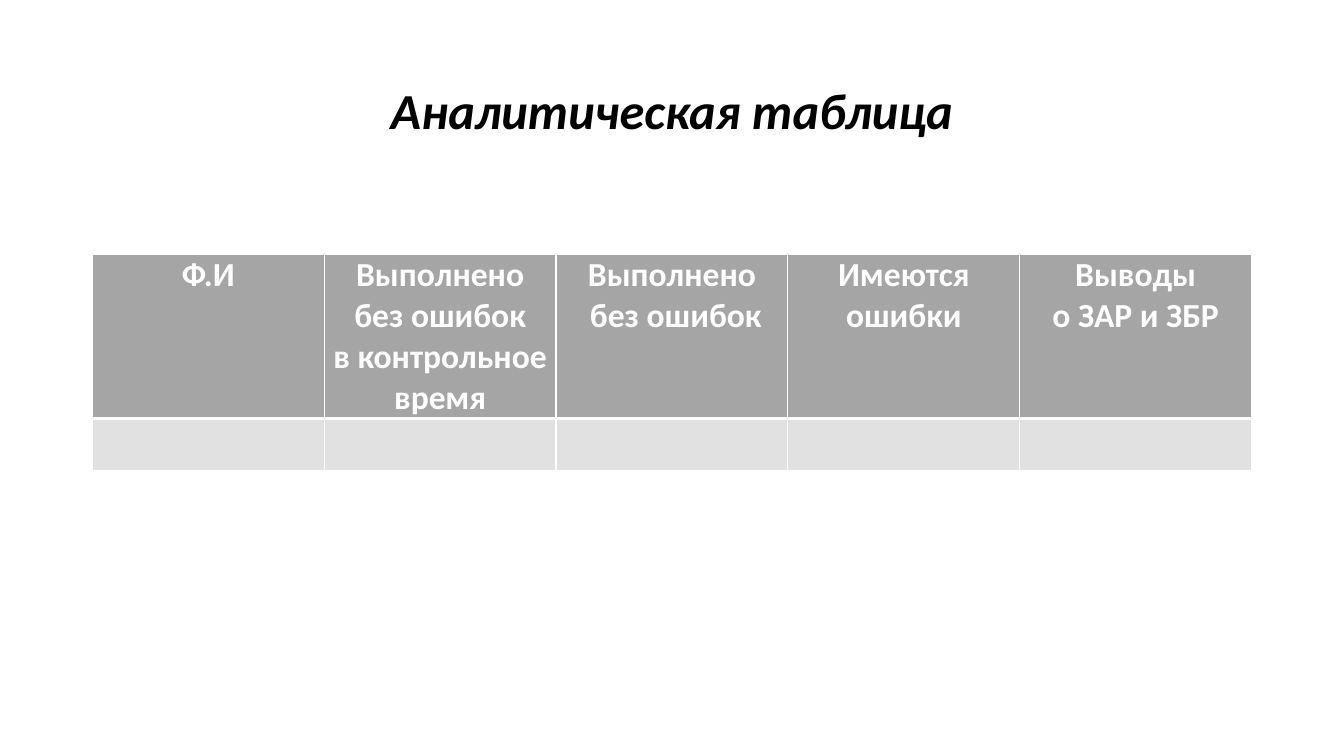
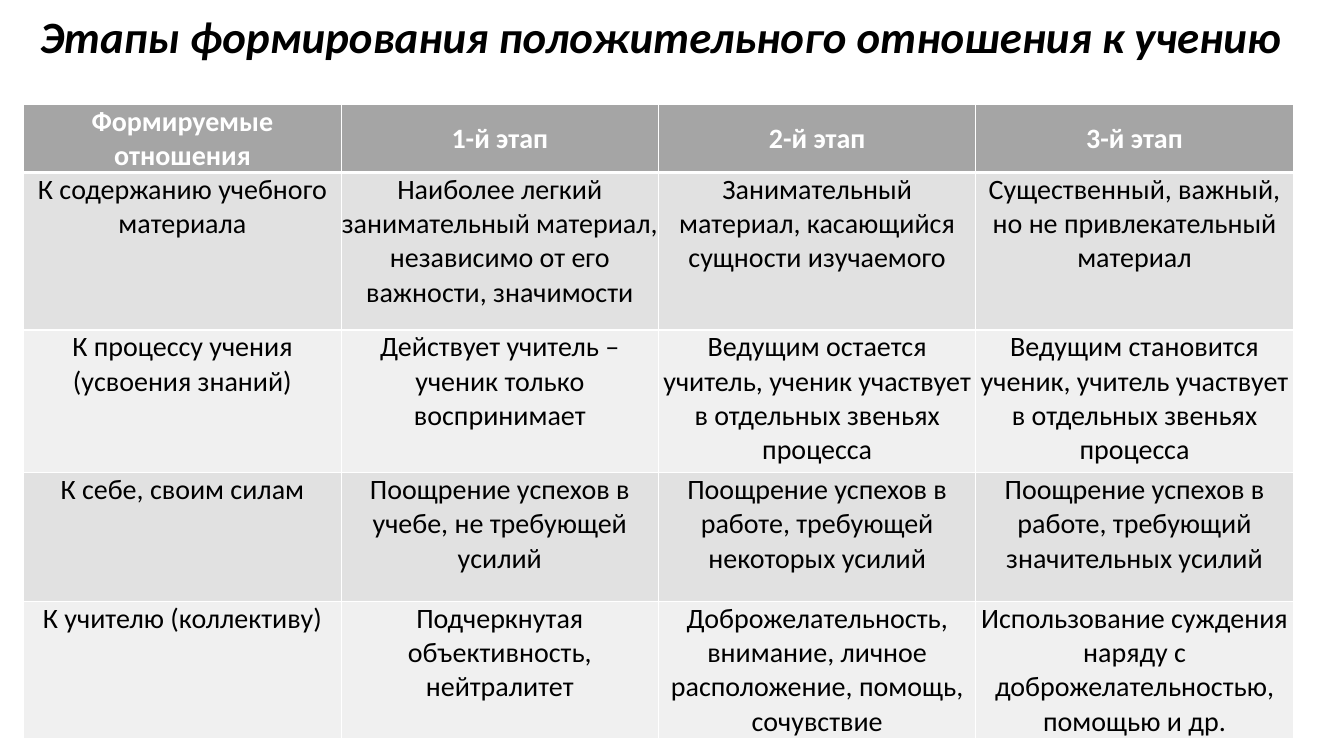
from dataclasses import dataclass

from lxml.etree import SubElement
from pptx import Presentation
from pptx.dml.color import RGBColor as RGB
from pptx.enum.text import MSO_ANCHOR as Anchor, PP_ALIGN as Align
from pptx.oxml.ns import qn
from pptx.util import Pt


@dataclass(frozen=True)
class Theme:
    font: str = "Calibri"
    ink: str = "000000"
    white: str = "FFFFFF"
    head: str = "A5A5A5"
    bands: tuple = ("E1E1E1", "F0F0F0")
    thin: int = 1
    thick: int = 3


T = Theme()

# Content: boxes are left, top, width, height; a line break starts a paragraph
SLIDES = [
    {
        "title": "Аналитическая таблица",
        "box": (66, 29, 828, 104),
        "size": 36,
        "table": {
            "at": (66, 182, 828),
            "size": 24,
            "inset": 5,
            "anchor": Anchor.TOP,
            "heights": (117, 37),
            "rows": [
                ("Ф.И", "Выполнено без ошибок\nв контрольное время",
                 "Выполнено\n без ошибок", "Имеются\nошибки",
                 "Выводы\nо ЗАР и ЗБР"),
                ("",) * 5,
            ],
        },
    },
    {
        "title": "Этапы формирования положительного отношения к учению",
        "box": (0, 0, 944.6, 55.4),
        "size": 32,
        "table": {
            "at": (17, 74.7, 906.8),
            "size": 20,
            "inset": 0,
            "anchor": Anchor.MIDDLE,
            "heights": (48.6, 112.5, 102, 92, 98),
            "rows": [
                ("Формируемые отношения", "1-й этап", "2-й этап", "3-й этап"),
                ("К содержанию учебного материала",
                 "Наиболее легкий занимательный материал, "
                 "независимо от его важности, значимости",
                 "Занимательный материал, касающийся сущности изучаемого",
                 "Существенный, важный, но не привлекательный материал"),
                ("К процессу учения (усвоения знаний)",
                 "Действует учитель – ученик только воспринимает",
                 "Ведущим остается учитель, ученик участвует "
                 "в отдельных звеньях процесса",
                 "Ведущим становится ученик, учитель участвует "
                 "в отдельных звеньях процесса"),
                ("К себе, своим силам",
                 "Поощрение успехов в учебе, не требующей усилий",
                 "Поощрение успехов в работе, требующей некоторых усилий",
                 "Поощрение успехов в работе, требующий значительных усилий"),
                ("К учителю (коллективу)",
                 "Подчеркнутая объективность, нейтралитет",
                 "Доброжелательность, внимание, личное расположение, "
                 "помощь, сочувствие",
                 "Использование суждения наряду с доброжелательностью, "
                 "помощью и др."),
            ],
        },
    },
]


def style(frame, size, color, bold=False, italic=False):
    """Centre the paragraphs and format their runs."""
    for para in frame.paragraphs:
        para.alignment = Align.CENTER
        for run in para.runs:
            font = run.font
            font.name, font.size = T.font, Pt(size)
            font.bold, font.italic = bold, italic
            font.color.rgb = RGB.from_string(color)


def add_title(slide, text, box, size):
    frame = slide.shapes.add_textbox(*map(Pt, box)).text_frame
    frame.word_wrap = True
    frame.vertical_anchor = Anchor.MIDDLE
    frame.text = text
    frame.paragraphs[0].line_spacing = 0.9
    style(frame, size, T.ink, bold=True, italic=True)


def set_edges(cell, row):
    """Draw white edges, thick between the header and the body."""
    props = cell._tc.get_or_add_tcPr()
    widths = {"lnL": T.thin, "lnR": T.thin,
              "lnT": T.thick if row == 1 else T.thin,
              "lnB": T.thick if row == 0 else T.thin}
    for tag, width in widths.items():
        line = SubElement(props, qn(f"a:{tag}"), w=str(Pt(width)))
        fill = SubElement(line, qn("a:solidFill"))
        SubElement(fill, qn("a:srgbClr"), val=T.white)


def add_grid(slide, at, size, inset, anchor, heights, rows):
    left, top, width = at
    cols = len(rows[0])
    grid = slide.shapes.add_table(
        len(rows), cols, Pt(left), Pt(top), Pt(width), Pt(sum(heights))).table
    for col in grid.columns:
        col.width = Pt(width / cols)
    for r, (high, texts) in enumerate(zip(heights, rows)):
        grid.rows[r].height = Pt(high)
        head = r == 0
        shade = T.head if head else T.bands[(r - 1) % 2]
        for c, text in enumerate(texts):
            cell = grid.cell(r, c)
            cell.margin_left = cell.margin_right = Pt(inset)
            cell.margin_top = cell.margin_bottom = 0
            cell.vertical_anchor = anchor if head else Anchor.TOP
            set_edges(cell, r)
            cell.fill.solid()
            cell.fill.fore_color.rgb = RGB.from_string(shade)
            cell.text_frame.text = text
            style(cell.text_frame, size, T.white if head else T.ink, bold=head)


def main():
    deck = Presentation()
    deck.slide_width, deck.slide_height = Pt(960), Pt(540)
    for item in SLIDES:
        slide = deck.slides.add_slide(deck.slide_layouts[6])
        add_title(slide, item["title"], item["box"], item["size"])
        add_grid(slide, **item["table"])
    deck.save("out.pptx")


if __name__ == "__main__":
    main()
